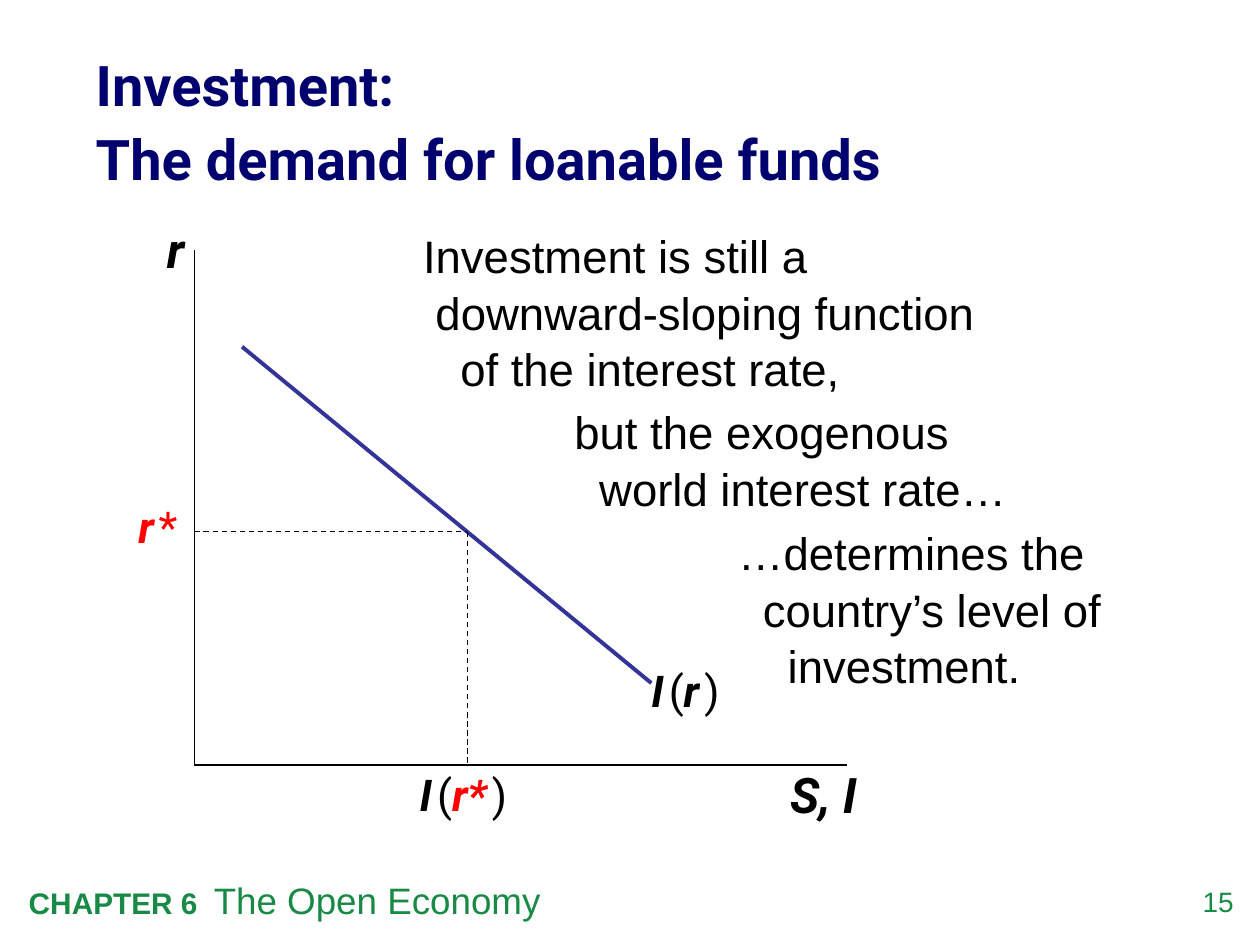
from lxml.etree import SubElement
from pptx import Presentation
from pptx.dml.color import RGBColor
from pptx.enum.dml import MSO_LINE
from pptx.enum.shapes import MSO_CONNECTOR
from pptx.enum.text import MSO_ANCHOR, MSO_AUTO_SIZE, PP_ALIGN
from pptx.oxml.ns import qn
from pptx.util import Cm, Pt

BLACK, RED, GREEN, NAVY, BLUE = "000000", "FF0000", "198A46", "00006E", "333399"
AXIS_LEFT, AXIS_TOP, AXIS_RIGHT, AXIS_BOTTOM = 3.92, 5.03, 17.07, 15.42
RATE_HEIGHT, INVESTMENT_LEVEL = 10.72, 9.42
DEFAULT_INSETS = (0.25, 0.13, 0.25, 0.13)
NO_INSETS = (0, 0, 0, 0)
CURVE_INSETS = (0, 0, 0, 0.25)
INDENT_STEP = 0.25

NOTES = [
    ((8.28, 4.42, 12.27, 3.56),
     [("Investment is still a", 0), ("downward-sloping function", 1), ("of the interest rate,", 3)]),
    ((11.33, 7.98, 10.59, 2.46),
     [("but the exogenous", 0), ("world interest rate…", 2)]),
    ((14.63, 10.41, 8.26, 3.56),
     [("…determines the", 0), ("country’s level of", 2), ("investment.", 4)]),
]


def color(value):
    return RGBColor.from_string(value)


def add_run(paragraph, text, size=25, font="Roboto", fill=BLACK, bold=False, italic=False):
    run = paragraph.add_run()
    run.text = text
    run.font.size = Pt(size)
    run.font.name = font
    run.font.color.rgb = color(fill)
    run.font.bold = bold
    run.font.italic = italic


def set_insets(frame, insets):
    frame.margin_left, frame.margin_top, frame.margin_right, frame.margin_bottom = map(Cm, insets)


def add_box(slide, box, insets=DEFAULT_INSETS, align=PP_ALIGN.LEFT):
    frame = slide.shapes.add_textbox(*map(Cm, box)).text_frame
    frame.word_wrap = True
    set_insets(frame, insets)
    paragraph = frame.paragraphs[0]
    paragraph.alignment = align
    paragraph.line_spacing = 1.04
    return frame


def add_title(slide):
    title = slide.shapes.title
    title.left, title.top, title.width, title.height = map(Cm, (1.93, 1.17, 20.93, 2.41))
    frame = title.text_frame
    frame.auto_size = MSO_AUTO_SIZE.NONE
    frame.vertical_anchor = MSO_ANCHOR.MIDDLE
    set_insets(frame, NO_INSETS)
    paragraph = frame.paragraphs[0]
    paragraph.alignment = PP_ALIGN.LEFT
    paragraph.line_spacing = 1.1
    add_run(paragraph, "Investment:", size=32, fill=NAVY, bold=True)
    paragraph.add_line_break()
    add_run(paragraph, "The demand for loanable funds", size=32, fill=NAVY, bold=True)


def add_note(slide, box, lines):
    frame = add_box(slide, box)
    for index, (text, level) in enumerate(lines):
        paragraph = frame.add_paragraph() if index else frame.paragraphs[0]
        paragraph.line_spacing = 1.04
        properties = paragraph._p.get_or_add_pPr()
        properties.set("marL", str(Cm(level * INDENT_STEP)))
        properties.set("indent", "0")
        add_run(paragraph, text, size=26, font="Arial")


def add_line(slide, start, end, stroke=BLACK, width=0.75, dashed=False):
    line = slide.shapes.add_connector(MSO_CONNECTOR.STRAIGHT, *map(Cm, start + end))
    line.line.color.rgb = color(stroke)
    line.line.width = Pt(width)
    if dashed:
        line.line.dash_style = MSO_LINE.DASH
    SubElement(line._element.spPr, qn("a:effectLst"))


def add_axis_label(slide, box, text):
    paragraph = add_box(slide, box, align=PP_ALIGN.CENTER).paragraphs[0]
    add_run(paragraph, text, size=28, bold=True, italic=True)


def add_function_label(slide, box, argument, fill=BLACK):
    paragraph = add_box(slide, box, CURVE_INSETS).paragraphs[0]
    add_run(paragraph, "I", bold=True, italic=True)
    add_run(paragraph, " ", size=12, bold=True, italic=True)
    add_run(paragraph, "(")
    add_run(paragraph, argument, fill=fill, bold=True, italic=True)
    add_run(paragraph, " ", size=12, fill=fill, bold=True, italic=True)
    add_run(paragraph, ")")


def add_rate_label(slide):
    paragraph = add_box(slide, (2.54, 9.91, 1.7, 1.32)).paragraphs[0]
    add_run(paragraph, "r", fill=RED, bold=True, italic=True)
    add_run(paragraph, " ", size=11, fill=RED, bold=True, italic=True)
    add_run(paragraph, "*", fill=RED)


def add_footer(slide):
    number = add_box(slide, (23.47, 17.81, 1.4, 0.81), NO_INSETS, PP_ALIGN.RIGHT)
    add_run(number.paragraphs[0], "15", size=16, font="Arial", fill=GREEN)
    chapter = add_box(slide, (0.33, 17.53, 20.78, 1.14)).paragraphs[0]
    tabs = SubElement(chapter._p.get_or_add_pPr(), qn("a:tabLst"))
    SubElement(tabs, qn("a:tab"), pos=str(Cm(3.73)), algn="l")
    add_run(chapter, "CHAPTER 6\t", size=17, font="Arial", fill=GREEN, bold=True)
    add_run(chapter, "The Open Economy", size=21, font="Arial", fill=GREEN)


def add_diagram(slide):
    origin = (AXIS_LEFT, AXIS_BOTTOM)
    equilibrium = (INVESTMENT_LEVEL, RATE_HEIGHT)
    add_line(slide, (AXIS_LEFT, AXIS_TOP), origin)
    add_line(slide, origin, (AXIS_RIGHT, AXIS_BOTTOM))
    add_axis_label(slide, (2.97, 4.24, 1.14, 1.45), "r")
    add_axis_label(slide, (15.42, 15.24, 2.36, 1.45), "S, I")
    add_line(slide, (4.88, 6.99), (13.13, 13.77), stroke=BLUE, width=2.25)
    add_line(slide, (AXIS_LEFT, RATE_HEIGHT), equilibrium, dashed=True)
    add_line(slide, equilibrium, (INVESTMENT_LEVEL, AXIS_BOTTOM), dashed=True)
    add_rate_label(slide)
    add_function_label(slide, (13.13, 13.34, 1.9, 1.32), "r")
    add_function_label(slide, (8.46, 15.44, 2.54, 1.32), "r*", fill=RED)


def main():
    presentation = Presentation()
    presentation.slide_width, presentation.slide_height = Cm(25.4), Cm(19.05)
    slide = presentation.slides.add_slide(presentation.slide_layouts[5])
    add_footer(slide)
    add_title(slide)
    for box, lines in NOTES:
        add_note(slide, box, lines)
    add_diagram(slide)
    presentation.save("out.pptx")


if __name__ == "__main__":
    main()
